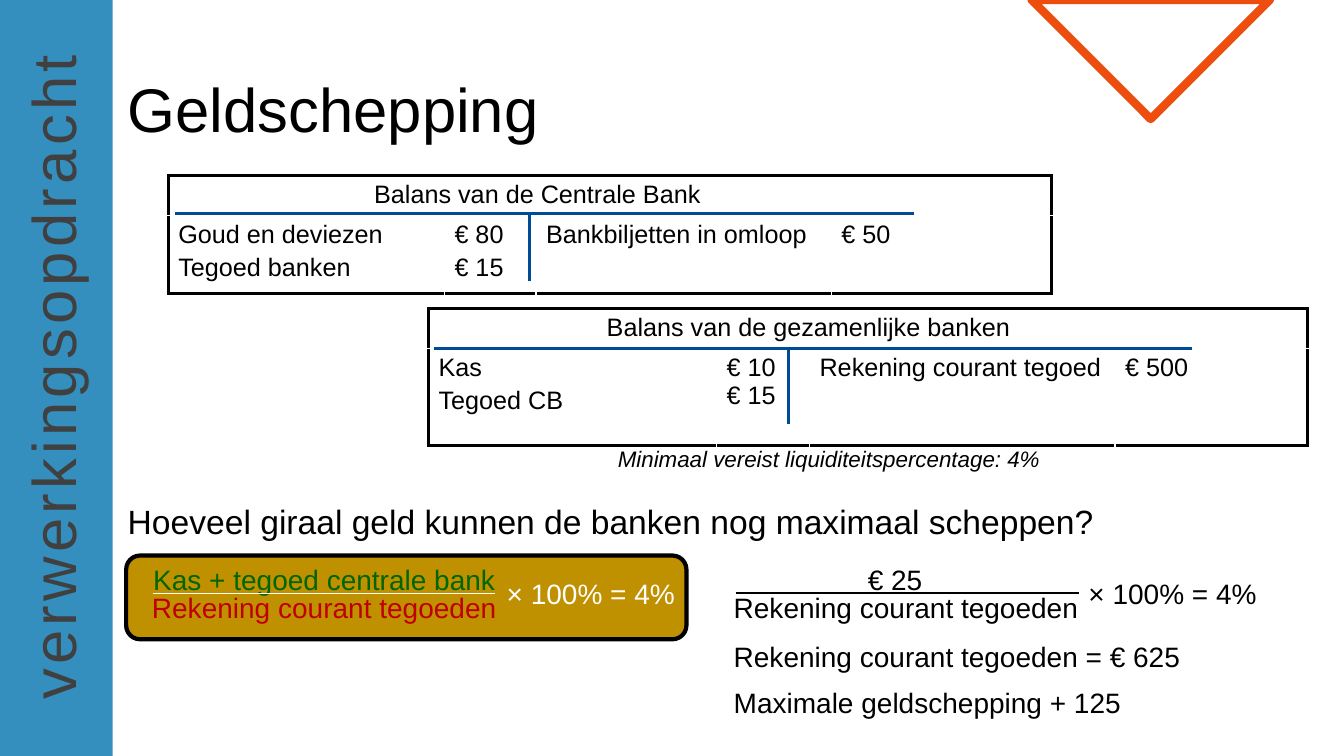
import pptx
import pptx.util
import pptx.dml.color
import pptx.enum.shapes
import pptx.enum.text
import pptx.oxml.ns
from lxml import etree

Cm, Pt = pptx.util.Cm, pptx.util.Pt
Rgb = pptx.dml.color.RGBColor.from_string
Kind = pptx.enum.shapes.MSO_SHAPE
tag = pptx.oxml.ns.qn

theme = {
    "font": "Arial", "ink": "000000", "white": "FFFFFF", "gray": "404040",
    "bar": "1A80B6", "frame": "ED4D0F", "gold": "BF9000", "rule": "004B95",
    "green": "006600", "red": "C00000",
    "head": 44, "ask": 24, "body": 20, "cell": 18, "note": 16,
}

deck = pptx.Presentation()
deck.slide_width, deck.slide_height = Cm(33.87), Cm(19.05)
slide = deck.slides.add_slide(deck.slide_layouts[6])
shapes = slide.shapes


def write(text, box=None, frame=None, size="body", color="ink", italic=False,
          under=None, track=0, lead=None, gap=0, turn=0, middle=False):
    if box:
        shape = shapes.add_textbox(*map(Cm, box))
        shape.rotation = turn
        frame = shape.text_frame
        frame.word_wrap = True
        if middle:
            frame.vertical_anchor = pptx.enum.text.MSO_ANCHOR.MIDDLE
    for i, part in enumerate([text] if isinstance(text, str) else text):
        para = frame.add_paragraph() if i else frame.paragraphs[0]
        para.text = part
        if lead:
            para.line_spacing = lead
        if i:
            para.space_before = Pt(gap)
        for run in para.runs:
            font = run.font
            font.name, font.size = theme["font"], Pt(theme[size])
            font.color.rgb = Rgb(theme[color])
            font.italic = italic
            props = run._r.get_or_add_rPr()
            if track:
                props.set("spc", str(track * 100))
            if under:
                font.underline = True
                line = etree.Element(tag("a:uFill"))
                fill = etree.SubElement(line, tag("a:solidFill"))
                etree.SubElement(fill, tag("a:srgbClr"), val=theme[under])
                props.find(tag("a:latin")).addprevious(line)


def edge(cell, side, color, width):
    props = cell._tc.get_or_add_tcPr()
    line = etree.SubElement(props, tag("a:ln" + side), w=str(Pt(width)))
    fill = etree.SubElement(line, tag("a:solidFill"))
    etree.SubElement(fill, tag("a:srgbClr"), val=theme[color])


pen = shapes.build_freeform(26.16, -0.18, scale=Cm(1))
pen.add_line_segments([(32.16, -0.18), (32.46, 0.15), (29.16, 3.48), (25.83, 0.15)])
frame = pen.convert_to_shape()
frame.shadow.inherit = False
frame.fill.background()
frame.line.color.rgb = Rgb(theme["frame"])
frame.line.width = Pt(6)

bar = shapes.add_shape(Kind.RECTANGLE, 0, Cm(-0.03), Cm(2.84), Cm(19.08))
bar.shadow.inherit = False
bar.fill.solid()
bar.fill.fore_color.rgb = Rgb(theme["bar"])
bar.line.fill.background()
tint = bar._element.spPr.find(".//" + tag("a:srgbClr"))
etree.SubElement(tint, tag("a:alpha"), val="88000")

write("verwerkingsopdracht", (-7.19, 8.31, 17.02, 2.13), size="head",
      color="gray", track=3, turn=270)
write("Geldschepping", (2.97, 0.99, 30, 3.68), size="head", lead=0.9, middle=True)
write("Hoeveel giraal geld kunnen de banken nog maximaal scheppen?",
      (2.97, 12.5, 25.4, 1.27), size="ask")
write("Minimaal vereist liquiditeitspercentage: 4%",
      (15.32, 11.1, 11.43, 0.94), size="note", italic=True)

pill = shapes.add_shape(Kind.ROUNDED_RECTANGLE, Cm(3.18), Cm(14), Cm(14.12), Cm(2.11))
pill.shadow.inherit = False
pill.fill.solid()
pill.fill.fore_color.rgb = Rgb(theme["gold"])
pill.line.color.rgb = Rgb(theme["ink"])
pill.line.width = Pt(3)

sums = [
    (0, "Kas + tegoed centrale bank", 3.61, "green", "red", "white"),
    (14.66, "€ 25", 21.62, "ink", "ink", "ink"),
]
for shift, top, left, upper, lower, tail in sums:
    write("Rekening courant tegoeden", (3.58 + shift, 14.76, 9.42, 1.12), color=lower)
    write(top, (left, 14.05, 9.5, 1.12), color=upper, under=tail)
    write("× 100% = 4%", (12.52 + shift, 14.4, 5.2, 1.12), color=tail)

write("Rekening courant tegoeden = € 625", (18.24, 16, 14.58, 1.12))
write("Maximale geldschepping + 125", (18.24, 17.15, 14.58, 1.12))

books = [
    ((4.24, 4.42), (6.96, 2.31, 7.44, 2.31), (0.99, 1.96), 5.19,
     "Balans van de Centrale Bank",
     [["Goud en deviezen", "Tegoed banken"], ["€ 80", "€ 15"],
      "Bankbiljetten in omloop", "€ 50"]),
    ((10.8, 7.77), (7.26, 2.34, 7.7, 2.39), (1.02, 2.44), 4.49,
     "Balans van de gezamenlijke banken",
     [["Kas", "Tegoed CB"], "€ 10\n€ 15", "Rekening courant tegoed", "€ 500"]),
]
dark, pale = ("ink", 2.25), ("white", 1)
inner = [{"L": dark}, {"R": pale}, {"L": pale}, {"R": dark}]
for spot, wide, high, inset, name, items in books:
    grid = shapes.add_table(2, 4, *map(Cm, (*spot, sum(wide), sum(high)))).table
    grid.first_row = grid.horz_banding = False
    for col, size in zip(grid.columns, wide):
        col.width = Cm(size)
    for row, size in zip(grid.rows, high):
        row.height = Cm(size)
    grid.cell(0, 0).merge(grid.cell(0, 3))
    for c in range(4):
        for r in range(2):
            cell = grid.cell(r, c)
            ends = {**inner[c], "T": pale, "B": dark} if r else {
                "L": dark, "R": dark, "T": dark, "B": pale}
            for side in "LRTB":
                if side in ends:
                    edge(cell, side, *ends[side])
            cell.fill.background()
        write(items[c], frame=grid.cell(1, c).text_frame, size="cell", gap=3.6)
    grid.cell(0, 0).margin_left = Cm(inset)
    write(name, frame=grid.cell(0, 0).text_frame, size="cell")

rules = [
    (4.42, 5.38, 23.04, 5.38, "rule", 2.25),
    (13.34, 5.38, 13.34, 7.09, "rule", 2.25),
    (10.95, 8.79, 30.05, 8.79, "rule", 2.25),
    (19.86, 8.79, 19.86, 10.69, "rule", 2.25),
    (18.54, 14.94, 27.18, 14.94, "ink", 1.5),
]
for *ends, color, width in rules:
    rule = shapes.add_connector(pptx.enum.shapes.MSO_CONNECTOR.STRAIGHT, *map(Cm, ends))
    rule.line.color.rgb = Rgb(theme[color])
    rule.line.width = Pt(width)
    etree.SubElement(rule._element.spPr, tag("a:effectLst"))

deck.save("out.pptx")
